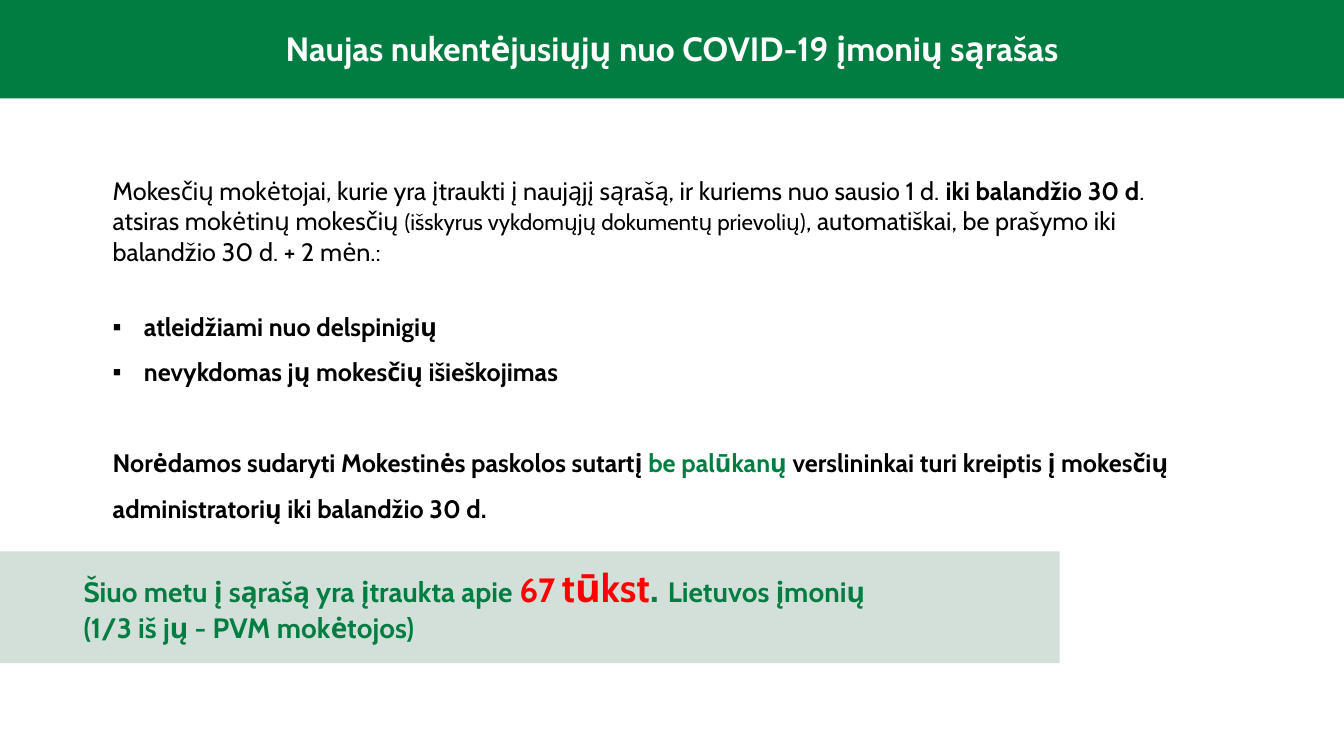
from pptx import Presentation
from pptx import util as u
from pptx.dml.color import RGBColor
from pptx.enum import shapes, text
from pptx.oxml.ns import qn
from lxml import etree

# Content: each paragraph is (runs, format), each run is (words, format)
HUES = {"band": "017D41", "pale": "D3E0D9", "green": "007D40",
        "red": "FF0000", "black": "000000", "white": "FFFFFF"}
BOLD = {"bold": True}
TITLE = [([("Naujas nukentėjusiųjų nuo COVID-19 įmonių sąrašas", {})], {})]
NOTE = [
    ([("Šiuo metu į sąrašą yra įtraukta apie ", {}),
      ("67", {"size": 24, "hue": "red"}),
      (" ", {"hue": "red"}),
      ("tūkst", {"size": 28, "hue": "red"}),
      (". ", {"size": 28}),
      ("Lietuvos įmonių", {})], {}),
    ([("(1/3 iš jų - PVM mokėtojos)", {})], {}),
]
BODY = [
    ([("Mokesčių mokėtojai, kurie yra įtraukti į naująjį sąrašą, "
       "ir kuriems nuo sausio 1 d. ", {}),
      ("iki balandžio 30 d", BOLD),
      (". atsiras mokėtinų mokesčių ", {}),
      ("(išskyrus vykdomųjų dokumentų prievolių)", {"size": 16}),
      (", automatiškai, be prašymo iki balandžio 30 d. + 2 mėn.:", {})], {}),
    ([("atleidžiami nuo delspinigių", BOLD)],
     {"bullet": "▪", "lines": 1.5, "before": 21.5}),
    ([("nevykdomas jų mokesčių išieškojimas", BOLD)],
     {"bullet": "▪", "lines": 1.5}),
    ([("Norėdamos sudaryti Mokestinės paskolos sutartį ", BOLD),
      ("be palūkanų ", {"bold": True, "hue": "green"}),
      ("verslininkai turi kreiptis į mokesčių administratorių "
       "iki balandžio 30 d.", BOLD)],
     {"lines": 1.5, "before": 32.5}),
]

# Slide and its measures
WIDE, HIGH = 13.33, 7.5
deck = Presentation()
deck.slide_width, deck.slide_height = u.Inches(WIDE), u.Inches(HIGH)
slide = deck.slides.add_slide(deck.slide_layouts[5])


def place(left, top, width, height):
    return [u.Inches(n) for n in (left, top, width, height)]


def paint(width, top, height, hue):
    bar = slide.shapes.add_shape(shapes.MSO_SHAPE.RECTANGLE,
                                 *place(0, top, width, height))
    bar.shadow.inherit = False
    bar.fill.solid()
    bar.fill.fore_color.rgb = RGBColor.from_string(HUES[hue])
    bar.line.fill.background()
    return bar


def write(box, paras, size=18, hue="black", bold=False, align="LEFT", anchor="TOP"):
    frame = box.text_frame
    frame.word_wrap = True
    frame.auto_size = text.MSO_AUTO_SIZE.NONE
    frame.vertical_anchor = getattr(text.MSO_ANCHOR, anchor)
    for i, (runs, form) in enumerate(paras):
        para = frame.add_paragraph() if i else frame.paragraphs[0]
        para.alignment = getattr(text.PP_ALIGN, align)
        para.line_spacing = form.get("lines", 1.0)
        para.space_before = u.Pt(form.get("before", 0))
        if "bullet" in form:
            props = para._p.get_or_add_pPr()
            props.set("marL", str(u.Inches(0.31)))
            props.set("indent", str(u.Inches(-0.31)))
            etree.SubElement(props, qn("a:buFont"), typeface="Arial")
            etree.SubElement(props, qn("a:buChar"), char=form["bullet"])
        for words, look in runs:
            run = para.add_run()
            run.text = words
            font = run.font
            font.name = "Cabin"
            font.size = u.Pt(look.get("size", size))
            font.bold = look.get("bold", bold)
            font.color.rgb = RGBColor.from_string(HUES[look.get("hue", hue)])


# Bands
paint(WIDE, 0, HIGH * 0.13, "band")
paint(10.51, 5.47, 1.11, "pale")

# Title, lifted above the green band
title = slide.shapes.title
title.left, title.top, title.width, title.height = place(0, 0.23, WIDE, 0.5)
slide.shapes._spTree.append(title._element)
write(title, TITLE, size=24, hue="white", bold=True, align="CENTER", anchor="MIDDLE")

# Note on the pale band, then the main text
write(slide.shapes.add_textbox(*place(0.73, 5.54, 10.01, 0.91)), NOTE,
      size=20, hue="green", bold=True)
write(slide.shapes.add_textbox(*place(1.02, 1.69, 10.96, 3.58)), BODY)

deck.save("out.pptx")
